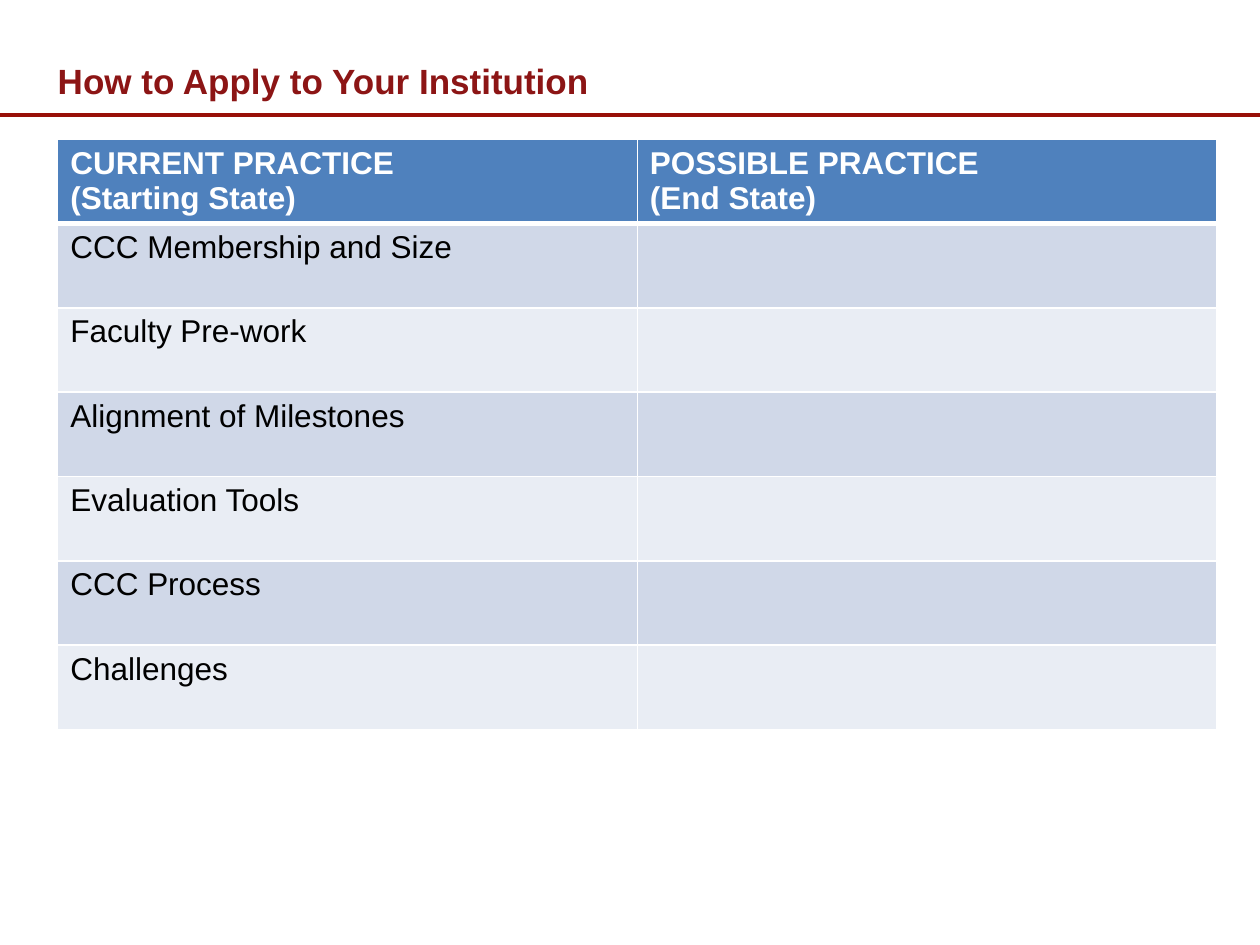
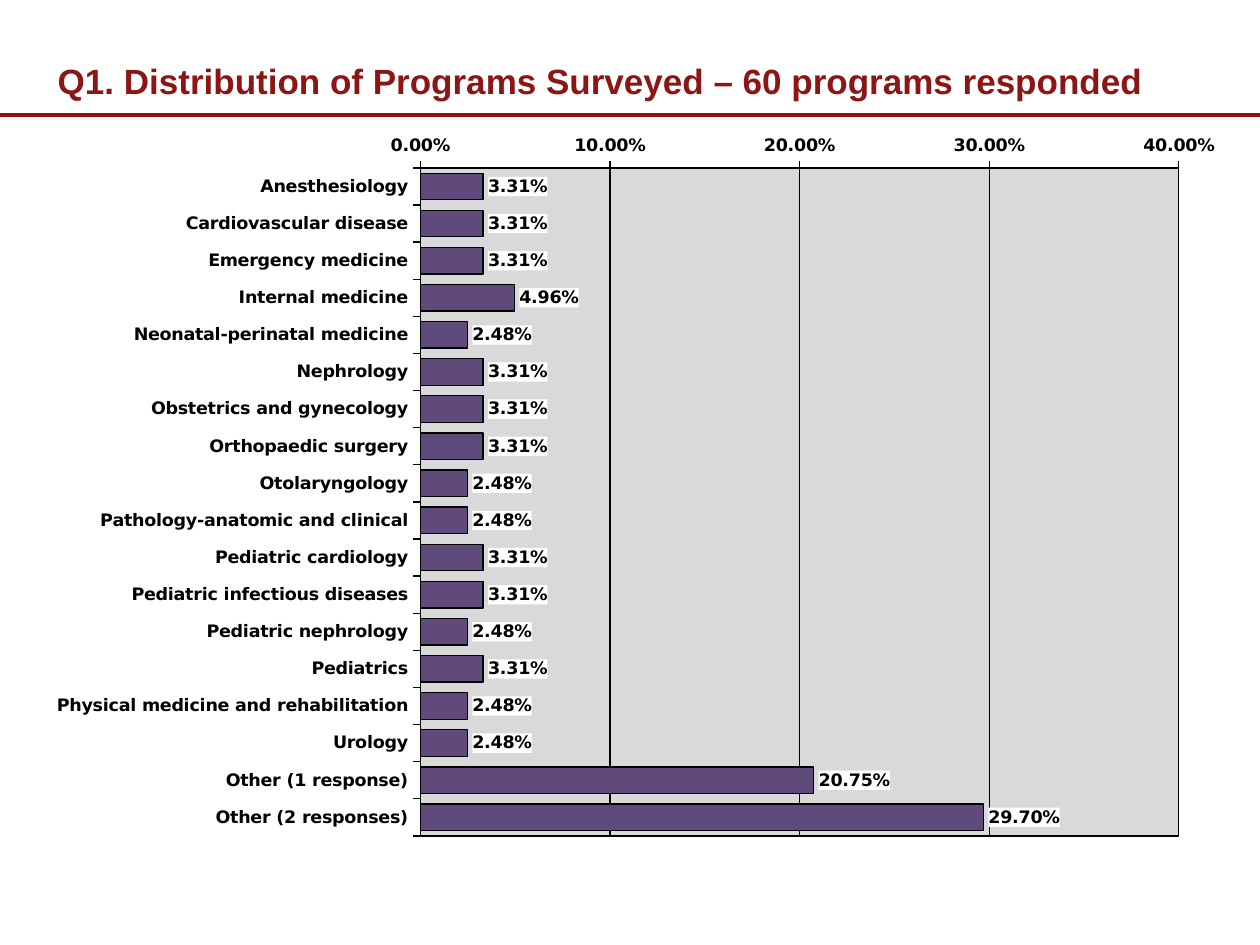
import pptx
import pptx.chart.data
import pptx.dml.color
import pptx.enum.chart
import pptx.enum.shapes
import pptx.enum.text
import pptx.oxml
import pptx.oxml.ns
import pptx.util
from dataclasses import dataclass

Pt = pptx.util.Pt
Color = pptx.dml.color.RGBColor.from_string

# Content
PRACTICE_TITLE = "How to Apply to Your Institution"
PRACTICE_HEADERS = [
    ("CURRENT PRACTICE", "(Starting State)"),
    ("POSSIBLE PRACTICE", "(End State)"),
]
PRACTICE_TOPICS = [
    "CCC Membership and Size",
    "Faculty Pre-work",
    "Alignment of Milestones",
    "Evaluation Tools",
    "CCC Process",
    "Challenges",
]
SURVEY_TITLE = "Q1. Distribution of Programs Surveyed – 60 programs responded"
PROGRAM_SHARES = {
    "Anesthesiology": 0.0331,
    "Cardiovascular disease": 0.0331,
    "Emergency medicine": 0.0331,
    "Internal medicine": 0.0496,
    "Neonatal-perinatal medicine": 0.0248,
    "Nephrology": 0.0331,
    "Obstetrics and gynecology": 0.0331,
    "Orthopaedic surgery": 0.0331,
    "Otolaryngology": 0.0248,
    "Pathology-anatomic and clinical": 0.0248,
    "Pediatric cardiology": 0.0331,
    "Pediatric infectious diseases": 0.0331,
    "Pediatric nephrology": 0.0248,
    "Pediatrics": 0.0331,
    "Physical medicine and rehabilitation": 0.0248,
    "Urology": 0.0248,
    "Other (1 response)": 0.2075,
    "Other (2 responses)": 0.297,
}


@dataclass(frozen=True)
class Theme:
    title: str = "8C1515"
    rule: str = "980F08"
    header: str = "4F81BD"
    bands: tuple = ("D0D8E8", "E9EDF4")
    white: str = "FFFFFF"
    black: str = "000000"
    plot: str = "D9D9D9"
    bar: str = "604A7B"
    text_font: str = "Arial"
    chart_font: str = "DejaVu Sans"
    title_size: int = 20
    table_size: int = 18
    chart_size: int = 10
    hairline: float = 0.75
    percent: str = "0.00%"


THEME = Theme()
WIDTH, HEIGHT = 720, 540
MARGIN = 33
RULE_TOP = 65.9
TABLE_TOP, COLUMN_WIDTH, ROW_HEIGHT = 79.5, 331.2, 48.2
# Left, top, width, height on the slide
CHART_BOX = (12, 78, 696, 426)
PLOT_BOX = (240.2, 86.6, 433.5, 390.5)


# Shared helpers
def style_font(font, name, size, color, bold):
    font.name, font.size, font.bold = name, Pt(size), bold
    font.color.rgb = Color(color)


def style_line(line, color, width=THEME.hairline):
    line.color.rgb = Color(color)
    line.width = Pt(width)


def chart_xml(body):
    return pptx.oxml.parse_xml(body.replace(
        ">", f" {pptx.oxml.ns.nsdecls('c', 'a')}>", 1))


def solid_fill(color):
    return f'<a:solidFill><a:srgbClr val="{color}"/></a:solidFill>'


def add_titled_slide(presentation, title):
    slide = presentation.slides.add_slide(presentation.slide_layouts[5])
    rule = slide.shapes.add_connector(
        pptx.enum.shapes.MSO_CONNECTOR.STRAIGHT,
        Pt(0), Pt(RULE_TOP), Pt(WIDTH), Pt(RULE_TOP))
    style_line(rule.line, THEME.rule, 2.25)
    rule._element.spPr.append(pptx.oxml.parse_xml(
        f"<a:effectLst {pptx.oxml.ns.nsdecls('a')}/>"))

    shape = slide.shapes.title
    shape.left, shape.top = Pt(MARGIN), Pt(16.5)
    shape.width, shape.height = Pt(660), Pt(41.5)
    frame = shape.text_frame
    frame.text = title
    frame.auto_size = pptx.enum.text.MSO_AUTO_SIZE.NONE
    frame.vertical_anchor = pptx.enum.text.MSO_ANCHOR.BOTTOM
    frame.margin_left = frame.margin_right = Pt(0)
    frame.margin_top = frame.margin_bottom = Pt(0)
    paragraph = frame.paragraphs[0]
    paragraph.alignment = pptx.enum.text.PP_ALIGN.LEFT
    paragraph.line_spacing = 1.05
    style_font(paragraph.font, THEME.text_font, THEME.title_size, THEME.title, True)
    return slide


# Practice table
def style_cell(cell, row):
    """Fill, border and letter a cell according to its row."""
    is_header = row == 0
    cell.fill.solid()
    cell.fill.fore_color.rgb = Color(
        THEME.header if is_header else THEME.bands[(row - 1) % 2])
    widths = {"lnL": 1, "lnR": 1, "lnT": 3 if row == 1 else 1,
              "lnB": 3 if is_header else 1}
    properties = cell._tc.get_or_add_tcPr()
    for index, (side, width) in enumerate(widths.items()):
        properties.insert(index, pptx.oxml.parse_xml(
            f'<a:{side} {pptx.oxml.ns.nsdecls("a")} w="{Pt(width)}">'
            f"{solid_fill(THEME.white)}</a:{side}>"))
    for paragraph in cell.text_frame.paragraphs:
        style_font(paragraph.font, THEME.text_font, THEME.table_size,
                   THEME.white if is_header else THEME.black, is_header)


def add_practice_table(slide):
    rows = [["\n".join(lines) for lines in PRACTICE_HEADERS]]
    rows += [[topic, ""] for topic in PRACTICE_TOPICS]
    columns = len(PRACTICE_HEADERS)
    table = slide.shapes.add_table(
        len(rows), columns, Pt(MARGIN), Pt(TABLE_TOP),
        Pt(COLUMN_WIDTH * columns), Pt(ROW_HEIGHT * len(rows))).table
    for column in table.columns:
        column.width = Pt(COLUMN_WIDTH)
    for row, texts in enumerate(rows):
        table.rows[row].height = Pt(ROW_HEIGHT)
        for column, text in enumerate(texts):
            cell = table.cell(row, column)
            cell.text = text
            style_cell(cell, row)


# Survey chart
def plot_layout():
    """Express the plot box as shares of the chart box."""
    left, top, width, height = CHART_BOX
    plot_left, plot_top, plot_width, plot_height = PLOT_BOX
    shares = {"x": (plot_left - left) / width, "y": (plot_top - top) / height,
              "w": plot_width / width, "h": plot_height / height}
    places = "".join(f'<c:{key}Mode val="edge"/>' for key in "xy")
    places += "".join(f'<c:{key} val="{share:.4f}"/>'
                      for key, share in shares.items())
    return chart_xml(
        '<c:layout><c:manualLayout><c:layoutTarget val="inner"/>'
        f"{places}</c:manualLayout></c:layout>")


def add_survey_chart(slide):
    data = pptx.chart.data.CategoryChartData(number_format=THEME.percent)
    data.categories = PROGRAM_SHARES.keys()
    data.add_series("Series 1", PROGRAM_SHARES.values())
    chart = slide.shapes.add_chart(
        pptx.enum.chart.XL_CHART_TYPE.BAR_CLUSTERED,
        *map(Pt, CHART_BOX), data).chart
    chart.has_legend = chart.has_title = False
    style_font(chart.font, THEME.chart_font, THEME.chart_size, THEME.black, True)

    # Bars and value labels
    plot = chart.plots[0]
    plot.gap_width = 40
    plot.vary_by_categories = False
    series = plot.series[0]
    series.format.fill.solid()
    series.format.fill.fore_color.rgb = Color(THEME.bar)
    style_line(series.format.line, THEME.black)
    labels = series.data_labels
    labels.show_value = True
    labels.number_format = THEME.percent
    labels.number_format_is_linked = False
    labels.position = pptx.enum.chart.XL_LABEL_POSITION.OUTSIDE_END
    style_font(labels.font, THEME.chart_font, THEME.chart_size, THEME.black, True)
    labels._element.find(pptx.oxml.ns.qn("c:numFmt")).addnext(
        chart_xml(f"<c:spPr>{solid_fill(THEME.white)}</c:spPr>"))

    # Axes
    for axis in (chart.category_axis, chart.value_axis):
        axis.major_tick_mark = pptx.enum.chart.XL_TICK_MARK.OUTSIDE
        axis.minor_tick_mark = pptx.enum.chart.XL_TICK_MARK.NONE
        style_line(axis.format.line, THEME.black)
    chart.category_axis.reverse_order = True
    chart.category_axis.crosses = pptx.enum.chart.XL_AXIS_CROSSES.MINIMUM
    value_axis = chart.value_axis
    value_axis.minimum_scale, value_axis.maximum_scale = 0, 0.4
    value_axis.major_unit = 0.1
    value_axis.tick_labels.number_format = THEME.percent
    value_axis.tick_labels.number_format_is_linked = False
    style_line(value_axis.major_gridlines.format.line, THEME.black)

    # Plot area
    plot_area = chart._chartSpace.chart.plotArea
    for layout in plot_area.findall(pptx.oxml.ns.qn("c:layout")):
        plot_area.remove(layout)
    plot_area.insert(0, plot_layout())
    plot_area.append(chart_xml(
        f'<c:spPr>{solid_fill(THEME.plot)}<a:ln w="{Pt(THEME.hairline)}">'
        f"{solid_fill(THEME.black)}</a:ln></c:spPr>"))


def main():
    presentation = pptx.Presentation()
    presentation.slide_width, presentation.slide_height = Pt(WIDTH), Pt(HEIGHT)
    add_practice_table(add_titled_slide(presentation, PRACTICE_TITLE))
    add_survey_chart(add_titled_slide(presentation, SURVEY_TITLE))
    presentation.save("out.pptx")


if __name__ == "__main__":
    main()
